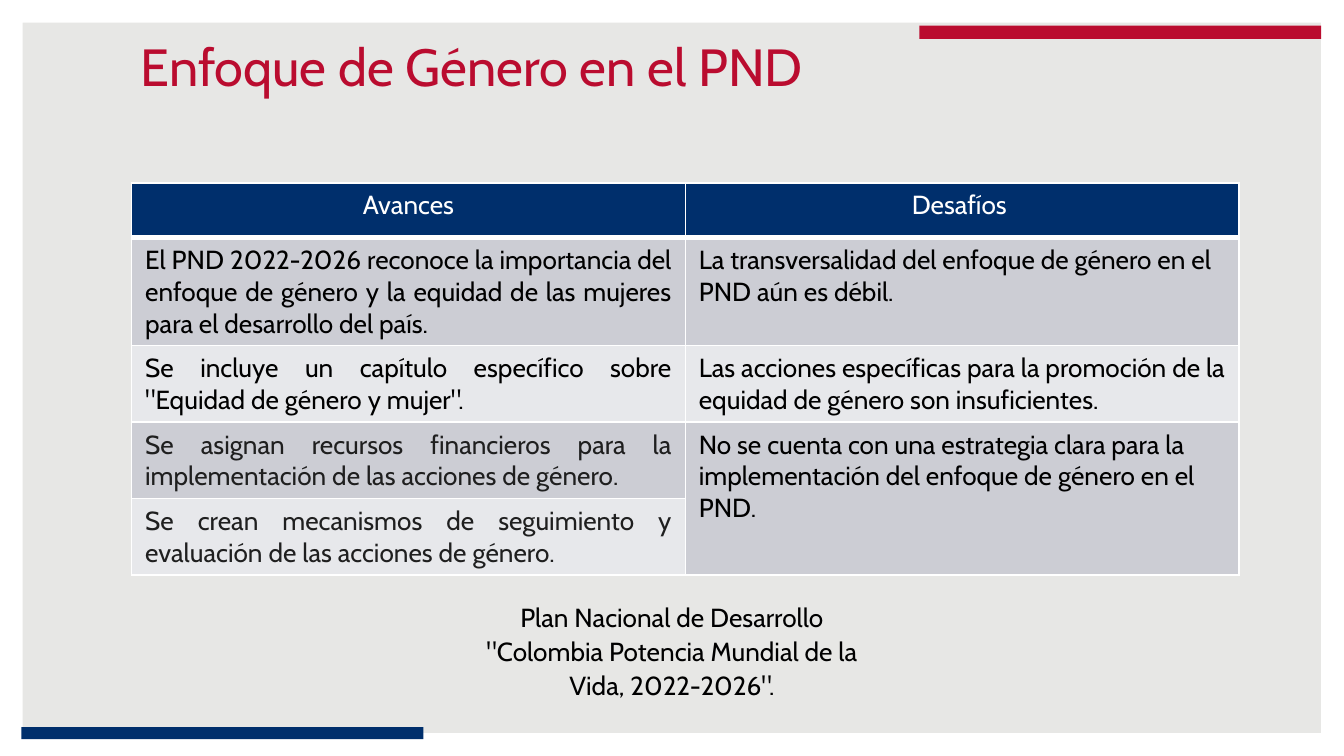
"""Build the slide on the gender focus of the national development plan."""
from lxml.etree import SubElement
from pptx import Presentation
from pptx.dml.color import RGBColor
from pptx.enum.shapes import MSO_SHAPE as Shape
from pptx.enum.text import MSO_ANCHOR as Anchor, PP_ALIGN as Align
from pptx.oxml.ns import qn
from pptx.util import Inches, Pt

RED, NAVY, WHITE, BLACK, GRAPHITE = "BA0C2F", "002F6C", "FFFFFF", "000000", "1F1F1F"
BACKGROUND, BANDS = "E7E7E5", ("E7E8EB", "CCCDD4")
PAGE_WIDTH = 10
PAGE_HEIGHT = PAGE_WIDTH * 9 / 16

TITLE = "Enfoque de Género en el PND"
CAPTION = 'Plan Nacional de Desarrollo "Colombia Potencia Mundial de la Vida, 2022-2026".'
HEADERS = ("Avances", "Desafíos ")
ADVANCES = [
    ("El PND 2022-2026 reconoce la importancia del enfoque de género y la equidad "
     "de las mujeres para el desarrollo del país.", BLACK),
    ('Se incluye un capítulo específico sobre "Equidad de género y mujer".', BLACK),
    ("Se asignan recursos financieros para la implementación de las acciones de género.",
     GRAPHITE),
    ("Se crean mecanismos de seguimiento y evaluación de las acciones de género.", GRAPHITE),
]
CHALLENGES = [
    "La transversalidad del enfoque de género en el PND aún es débil.",
    "Las acciones específicas para la promoción de la equidad de género son insuficientes.",
    "No se cuenta con una estrategia clara para la implementación del enfoque de género "
    "en el PND.",
]
ROW_HEIGHTS = (0.41, 0.79, 0.57, 0.57, 0.57)
COLUMN_WIDTH = 4.12
BARS = [((6.84, 0.19, 2.99, 0.1), RED), ((0.16, 5.41, 2.99, 0.09), NAVY)]


def color(value):
    return RGBColor.from_string(value)


def paint(target, value):
    target.fill.solid()
    target.fill.fore_color.rgb = color(value)


def write(frame, text, size, value, align, **spacing):
    frame.word_wrap = True
    para = frame.paragraphs[0]
    for name, setting in {"alignment": align, **spacing}.items():
        setattr(para, name, setting)
    span = para.add_run()
    span.text = text
    formats = {"name": "Cabin", "size": Pt(size), "bold": False}
    for name, setting in formats.items():
        setattr(span.font, name, setting)
    span.font.color.rgb = color(value)


def add_block(page, kind, place, value):
    block = page.shapes.add_shape(kind, *map(Inches, place))
    block.shadow.inherit = False
    paint(block, value)
    block.line.fill.background()
    return block


def add_borders(cell, row):
    properties = cell._tc.get_or_add_tcPr()
    widths = {"L": 1, "R": 1, "T": 3 if row == 1 else 1, "B": 3 if row == 0 else 1}
    for index, (side, width) in enumerate(widths.items()):
        line = SubElement(properties, qn(f"a:ln{side}"), w=str(Pt(width)))
        fill = SubElement(line, qn("a:solidFill"))
        SubElement(fill, qn("a:srgbClr"), val=WHITE)
        properties.insert(index, line)


def add_comparison(page):
    width, height = COLUMN_WIDTH * len(HEADERS), sum(ROW_HEIGHTS)
    place = map(Inches, (0.98, 1.36, width, height))
    table = page.shapes.add_table(len(ROW_HEIGHTS), len(HEADERS), *place).table
    for row, height in zip(table.rows, ROW_HEIGHTS):
        row.height = Inches(height)
    for row in range(len(ROW_HEIGHTS)):
        for column in range(len(HEADERS)):
            cell = table.cell(row, column)
            paint(cell, BANDS[row % 2] if row else NAVY)
            add_borders(cell, row)
    for column, text in enumerate(HEADERS):
        write(table.cell(0, column).text_frame, text, 14, WHITE, Align.CENTER)
    for row, (text, value) in enumerate(ADVANCES, 1):
        write(table.cell(row, 0).text_frame, text, 14, value, Align.JUSTIFY)
    for row, text in enumerate(CHALLENGES, 1):
        write(table.cell(row, 1).text_frame, text, 14, BLACK, Align.LEFT)
    table.cell(3, 1).merge(table.cell(4, 1))


def main():
    deck = Presentation()
    deck.slide_width, deck.slide_height = Inches(PAGE_WIDTH), Inches(PAGE_HEIGHT)
    page = deck.slides.add_slide(deck.slide_layouts[5])
    paint(page.background, BACKGROUND)

    border = add_block(page, Shape.FRAME, (0, 0, PAGE_WIDTH, PAGE_HEIGHT), WHITE)
    border.adjustments[0] = 0.03
    for place, value in BARS:
        add_block(page, Shape.RECTANGLE, place, value)

    title = page.shapes.title
    place = dict(zip(("left", "top", "width", "height"), (-0.74, 0.24, 8.5, 0.5)))
    for name, length in place.items():
        setattr(title, name, Inches(length))
    title.text_frame.vertical_anchor = Anchor.MIDDLE
    write(title.text_frame, TITLE, 28, RED, Align.CENTER)

    caption = page.shapes.add_textbox(*map(Inches, (3.39, 4.41, 3.22, 0.85)))
    write(caption.text_frame, CAPTION, 14, BLACK, Align.CENTER,
          line_spacing=1.08, space_after=Pt(8))
    add_comparison(page)
    deck.save("out.pptx")


if __name__ == "__main__":
    main()
